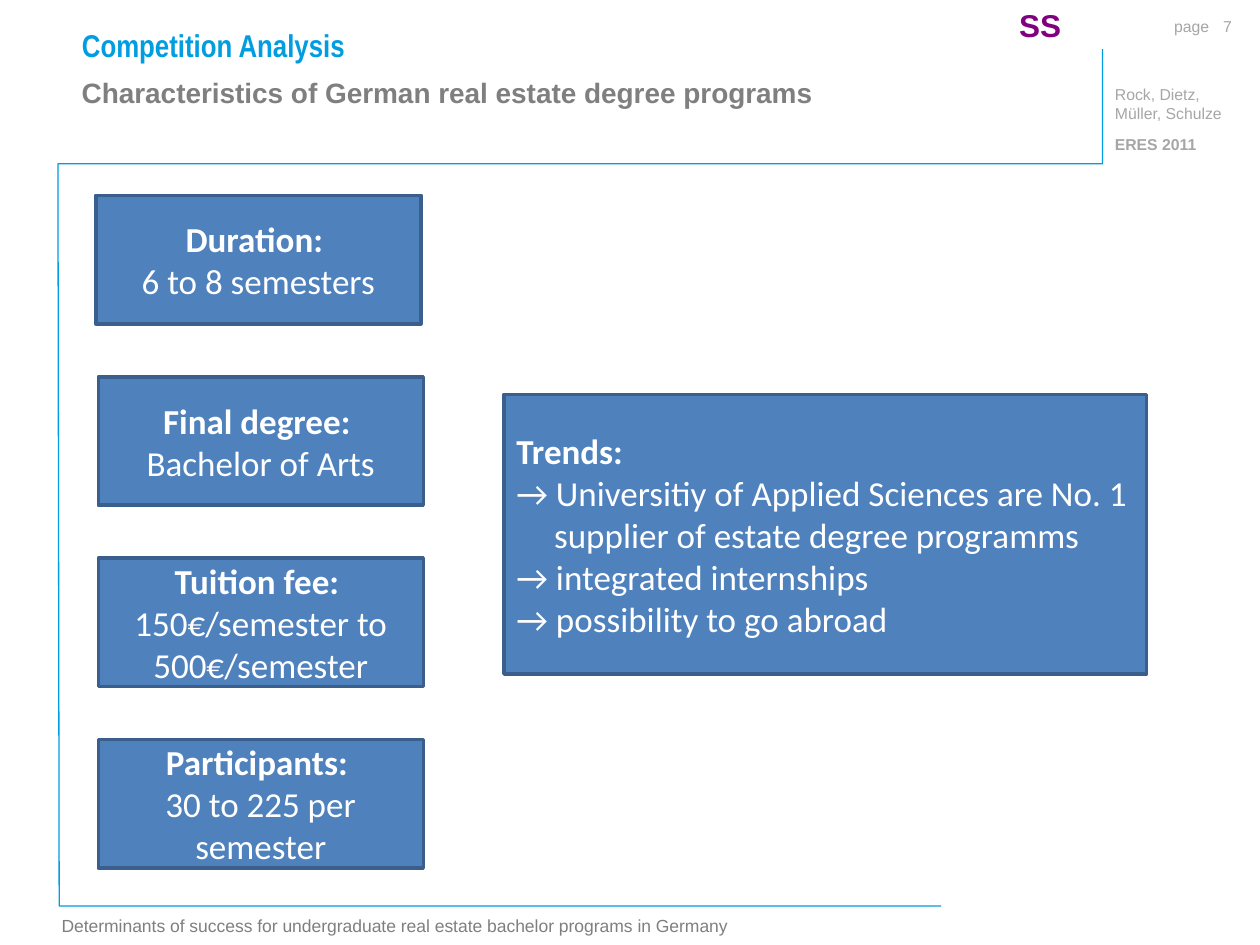
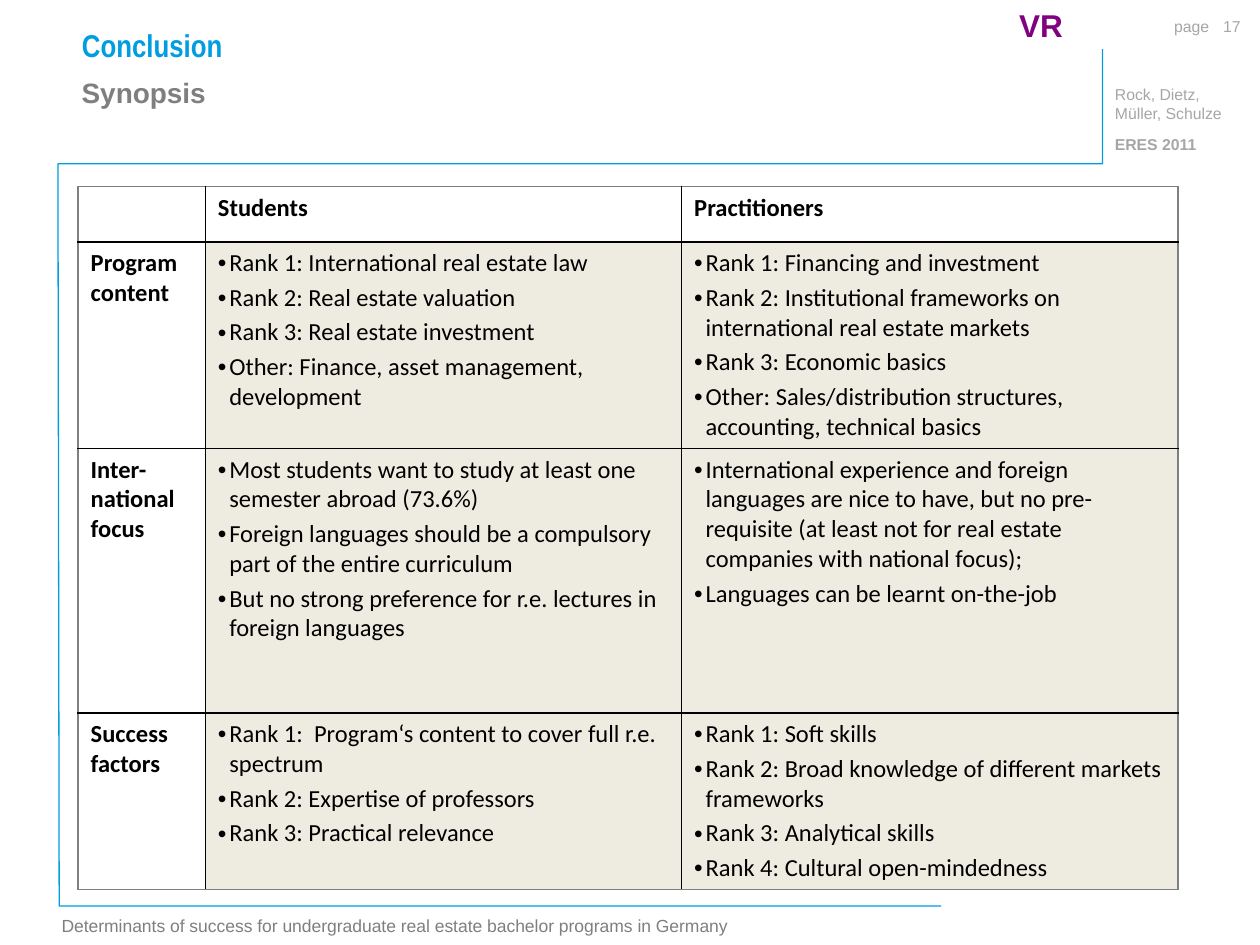
from dataclasses import dataclass

from lxml import etree
from pptx import Presentation
from pptx import util as u
from pptx.dml.color import RGBColor
from pptx.enum import shapes, text
from pptx.oxml import ns


@dataclass(frozen=True)
class Theme:
    blue: str = "009EE0"
    gray: str = "7F7F7F"
    pale: str = "A6A6A6"
    mark: str = "800080"
    box: str = "4F81BD"
    edge: str = "3A5F8C"
    sand: str = "EEECE1"
    white: str = "FFFFFF"
    black: str = "000000"
    sans: str = "Arial"
    slim: str = "Arial Narrow"
    body: str = "Calibri"
    note: int = 9
    foot: int = 10
    cell: int = 14
    sub: int = 16
    head: int = 18
    big: int = 20


T = Theme()
LEFT, CENTER = text.PP_ALIGN.LEFT, text.PP_ALIGN.CENTER
TOP, MIDDLE = text.MSO_ANCHOR.TOP, text.MSO_ANCHOR.MIDDLE

FACTS = [
    (0.76, "Duration: ", "6 to 8 semesters"),
    (0.78, "Final degree: ", "Bachelor of Arts"),
    (0.78, "Tuition fee: ", "150€/semester to 500€/semester"),
    (0.78, "Participants: ", "30 to 225 per semester"),
]
TRENDS = [
    "Trends:",
    "→ Universitiy of Applied Sciences are No. 1 supplier of estate degree programms",
    "→ integrated internships",
    "→ possibility to go abroad",
]
GROUPS = ["Students", "Practitioners"]
TOPICS = [
    ("Program content", [
        "Rank 1: International real estate law",
        "Rank 2: Real estate valuation",
        "Rank 3: Real estate investment",
        "Other: Finance, asset management, development",
    ], [
        "Rank 1: Financing and investment",
        "Rank 2: Institutional frameworks on international real estate markets",
        "Rank 3: Economic basics",
        "Other: Sales/distribution structures, accounting, technical basics",
    ]),
    ("Inter-national focus", [
        "Most students want to study at least one semester abroad (73.6%)",
        "Foreign languages should be a compulsory part of the entire curriculum",
        "But no strong preference for r.e. lectures in foreign languages",
    ], [
        "International experience and foreign languages are nice to have, but no "
        "pre-requisite (at least not for real estate companies with national focus);",
        "Languages can be learnt on-the-job",
    ]),
    ("Success factors", [
        "Rank 1:  Program‘s content to cover full r.e. spectrum",
        "Rank 2: Expertise of professors",
        "Rank 3: Practical relevance",
    ], [
        "Rank 1: Soft skills",
        "Rank 2: Broad knowledge of different markets frameworks",
        "Rank 3: Analytical skills",
        "Rank 4: Cultural open-mindedness",
    ]),
]


def rgb(color):
    return RGBColor.from_string(color)


def apply(item, **values):
    for name, value in values.items():
        setattr(item, name, value)


def inches(*sizes):
    return [u.Inches(size) for size in sizes]


def write(frame, lines, size, color, font=T.sans, bold=(), align=LEFT,
          indent=0, bullet=False, gap=0):
    for i, line in enumerate(lines):
        para = frame.paragraphs[0] if i == 0 else frame.add_paragraph()
        apply(para, alignment=align, space_before=u.Pt(gap if i else 0))
        if indent:
            props = para._p.get_or_add_pPr()
            props.set("marL", str(u.Inches(indent)))
            props.set("indent", str(-u.Inches(indent)))
            if bullet:
                etree.SubElement(props, ns.qn("a:buFont")).set("typeface", T.sans)
                etree.SubElement(props, ns.qn("a:buChar")).set("char", "•")
        run = para.add_run()
        run.text = line
        apply(run.font, name=font, size=u.Pt(size), bold=i in bold)
        run.font.color.rgb = rgb(color)


def label(slide, area, line, size, color, bold=False, anchor=TOP):
    frame = slide.shapes.add_textbox(*inches(*area)).text_frame
    apply(frame, word_wrap=True, vertical_anchor=anchor)
    write(frame, [line], size, color, bold=[0] if bold else ())


def panel(slide, area, lines, **style):
    rect = slide.shapes.add_shape(shapes.MSO_SHAPE.RECTANGLE, *inches(*area))
    rect.shadow.inherit = False
    rect.fill.solid()
    rect.fill.fore_color.rgb = rgb(T.box)
    rect.line.color.rgb = rgb(T.edge)
    rect.line.width = u.Pt(2)
    apply(rect.text_frame, word_wrap=True, vertical_anchor=MIDDLE)
    write(rect.text_frame, lines, T.big, T.white, T.body, bold=[0], **style)


def rule(slide):
    points = [inches(*point) for point in
              [(7.47, 7.19), (0.47, 7.19), (0.46, 1.3), (8.75, 1.3), (8.75, 0.39)]]
    pen = slide.shapes.build_freeform(*points[0])
    pen.add_line_segments(points[1:], close=False)
    line = pen.convert_to_shape()
    line.shadow.inherit = False
    line.fill.background()
    line.line.color.rgb = rgb(T.blue)
    line.line.width = u.Pt(0.75)


def start(deck, title, topic, page, mark):
    slide = deck.slides.add_slide(deck.slide_layouts[5])
    rule(slide)
    label(slide, (9.22, 0.08, 0.62, 0.31), "page", T.note, T.pale)
    label(slide, (9.61, 0.08, 0.39, 0.31), page, T.note, T.pale)
    label(slide, (8.75, 0.62, 1.25, 0.31), "Rock, Dietz, Müller, Schulze",
          T.note, T.pale)
    label(slide, (8.75, 1.02, 1, 0.31), "ERES 2011", T.note, T.pale, bold=True)
    label(slide, (0.39, 7.19, 5.73, 0.31),
          "Determinants of success for undergraduate real estate bachelor "
          "programs in Germany", T.foot, T.gray, anchor=MIDDLE)
    head = slide.shapes.title
    apply(head, **dict(zip(("left", "top", "width", "height"),
                           inches(0.55, 0.16, 8.2, 0.32))))
    apply(head.text_frame, word_wrap=True, vertical_anchor=TOP,
          auto_size=text.MSO_AUTO_SIZE.NONE)
    write(head.text_frame, [title], T.head, T.blue, T.slim, bold=[0])
    label(slide, (0.55, 0.55, 8.2, 0.7), topic, T.sub, T.gray, bold=True)
    label(slide, (7.99, 0, 0.6, 0.4), mark, T.head, T.mark, bold=True)
    return slide


def border(cell, sides):
    props = cell._tc.get_or_add_tcPr()
    for side, outer in sides.items():
        line = etree.SubElement(props, ns.qn(f"a:ln{side}"), w=str(u.Pt(1)))
        fill = etree.SubElement(line, ns.qn("a:solidFill"))
        color = T.gray if outer else T.black
        etree.SubElement(fill, ns.qn("a:srgbClr"), val=color)


def grid(slide, area, widths, heights):
    last, end = len(heights) - 1, len(widths) - 1
    table = slide.shapes.add_table(last + 1, end + 1, *inches(*area)).table
    apply(table, first_row=False, horz_banding=False)
    for col, width in zip(table.columns, inches(*widths)):
        col.width = width
    for row, height in zip(table.rows, inches(*heights)):
        row.height = height
    rows = [("", *([group] for group in GROUPS))]
    rows += [([name], *lists) for name, *lists in TOPICS]
    for r, row in enumerate(rows):
        for c, lines in enumerate(row):
            cell = table.cell(r, c)
            data = r > 0 and c > 0
            border(cell, {"L": c == 0, "R": c == end, "T": r == 0, "B": r == last})
            if data:
                cell.fill.solid()
                cell.fill.fore_color.rgb = rgb(T.sand)
            else:
                cell.fill.background()
            write(cell.text_frame, lines, T.cell, T.black, T.body,
                  bold=() if data else [0], indent=0.09 if data else 0,
                  bullet=data, gap=2.8)


def main():
    deck = Presentation()
    apply(deck, slide_width=u.Inches(10), slide_height=u.Inches(7.5))

    slide = start(deck, "Competition Analysis",
                  "Characteristics of German real estate degree programs", "7", "SS")
    for i, (left, *lines) in enumerate(FACTS):
        panel(slide, (left, 1.55 + 1.44 * i, 2.58, 1.02), lines, align=CENTER)
    panel(slide, (4, 3.13, 5.1, 2.22), TRENDS, indent=0.3)

    slide = start(deck, "Conclusion", "Synopsis", "17", "VR")
    grid(slide, (0.62, 1.48, 8.73, 5.58), [1.01, 3.78, 3.94], [0.44, 1.64, 2.1, 1.4])

    deck.save("out.pptx")


if __name__ == "__main__":
    main()
